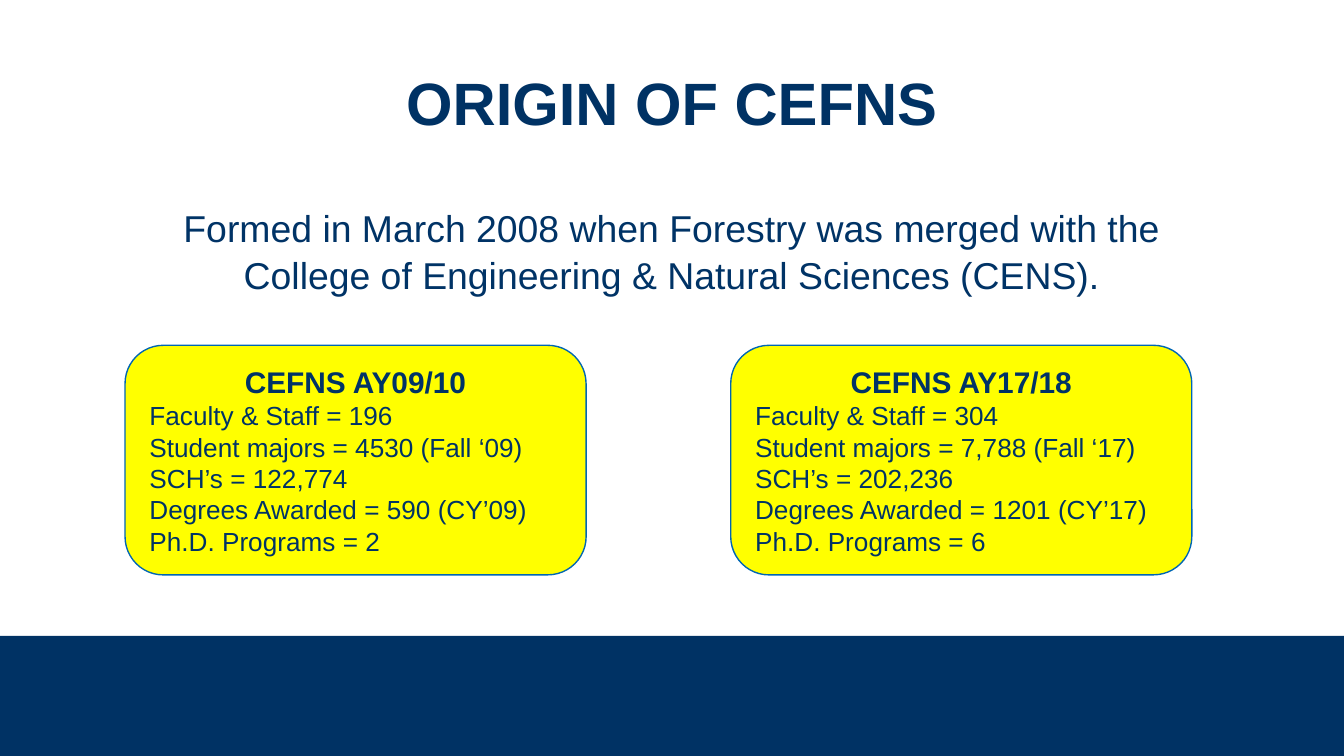
from pptx import Presentation
from pptx.dml.color import RGBColor
from pptx.enum.shapes import MSO_SHAPE
from pptx.enum.text import MSO_ANCHOR, PP_ALIGN
from pptx.util import Pt

FONT = "Arial"
NAVY, BAND, YELLOW, BLUE, WHITE = "003366", "003264", "FFFF00", "0066B3", "FFFFFF"
WIDTH, HEIGHT = 720, 405
BAND_TOP = 340.7
CARD_LEFT, CARD_TOP, CARD_WIDTH, CARD_HEIGHT = 67, 185, 247, 123
CARD_STEP = 324.5

CARDS = [
    ("CEFNS AY09/10", [
        "Faculty & Staff = 196",
        "Student majors = 4530 (Fall ‘09)",
        "SCH’s = 122,774",
        "Degrees Awarded = 590 (CY’09)",
        "Ph.D. Programs = 2",
    ]),
    ("CEFNS AY17/18", [
        "Faculty & Staff = 304",
        "Student majors = 7,788 (Fall ‘17)",
        "SCH’s = 202,236",
        "Degrees Awarded = 1201 (CY’17)",
        "Ph.D. Programs = 6",
    ]),
]


def color(value):
    return RGBColor.from_string(value)


def points(box):
    return [Pt(length) for length in box]


def format_para(para, size, fill, bold=False, align=PP_ALIGN.LEFT):
    para.alignment = align
    para.space_before = Pt(0)
    for span in para.runs:
        span.font.name = FONT
        span.font.size = Pt(size)
        span.font.bold = bold
        span.font.color.rgb = color(fill)


def add_block(page, kind, box, fill, line=None):
    block = page.shapes.add_shape(kind, *points(box))
    block.shadow.inherit = False
    block.fill.solid()
    block.fill.fore_color.rgb = color(fill)
    if line:
        block.line.color.rgb = color(line)
        block.line.width = Pt(0.75)
    else:
        block.line.fill.background()
    return block


def set_title(page, box, text):
    title = page.shapes.title
    title.left, title.top, title.width, title.height = points(box)
    frame = title.text_frame
    frame.text = text
    frame.vertical_anchor = MSO_ANCHOR.MIDDLE
    format_para(frame.paragraphs[0], 32, BAND, True, PP_ALIGN.CENTER)


def add_summary(page, box, lines):
    frame = page.shapes.add_textbox(*points(box)).text_frame
    frame.word_wrap = True
    frame.text = "\n".join(lines)
    for para in frame.paragraphs:
        format_para(para, 20, NAVY, align=PP_ALIGN.CENTER)
        para.line_spacing = 1.05


def add_card(page, box, heading, facts):
    card = add_block(page, MSO_SHAPE.ROUNDED_RECTANGLE, box, YELLOW, BLUE)
    frame = card.text_frame
    frame.word_wrap = True
    frame.vertical_anchor = MSO_ANCHOR.MIDDLE
    frame.text = "\n".join([heading, *facts])
    first, *others = frame.paragraphs
    format_para(first, 16, NAVY, True, PP_ALIGN.CENTER)
    for para in others:
        format_para(para, 14, NAVY)


def main():
    deck = Presentation()
    deck.slide_width, deck.slide_height = Pt(WIDTH), Pt(HEIGHT)
    page = deck.slides.add_slide(deck.slide_layouts[5])
    page.background.fill.solid()
    page.background.fill.fore_color.rgb = color(WHITE)

    add_block(page, MSO_SHAPE.RECTANGLE,
              (0, BAND_TOP, WIDTH, HEIGHT - BAND_TOP), BAND)
    set_title(page, (75, 12, 570, 85), "ORIGIN OF CEFNS")
    add_summary(page, (89, 105, 542, 55.5), [
        "Formed in March 2008 when Forestry was merged with the",
        "College of Engineering & Natural Sciences (CENS).",
    ])
    for index, (heading, facts) in enumerate(CARDS):
        left = CARD_LEFT + index * CARD_STEP
        add_card(page, (left, CARD_TOP, CARD_WIDTH, CARD_HEIGHT), heading, facts)

    deck.save("out.pptx")


if __name__ == "__main__":
    main()
